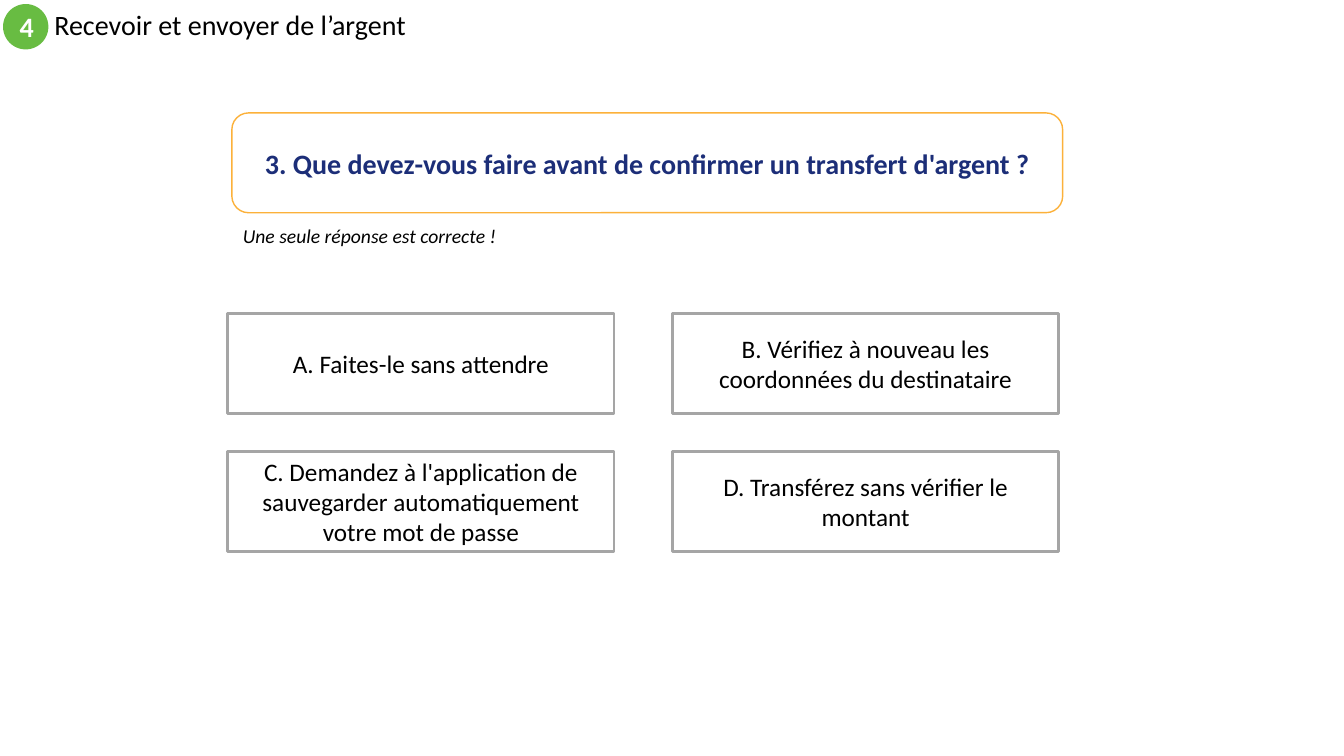
from dataclasses import dataclass

from pptx import Presentation, util as u
from pptx.dml.color import RGBColor
from pptx.enum import shapes, text


@dataclass(frozen=True)
class Theme:
    face: str = "Calibri"
    white: str = "FFFFFF"
    black: str = "000000"
    green: str = "68BC42"
    gold: str = "FCB13A"
    navy: str = "1C2E78"
    gray: str = "A5A5A5"
    head: int = 20
    body: int = 18
    note: int = 14


T = Theme()
WIDE, HIGH = 13.33, 7.5
KIND = shapes.MSO_SHAPE
SIDE = text.PP_ALIGN


def write(item, words, size, color, align=SIDE.CENTER, bold=False, slant=False):
    frame = item.text_frame
    frame.word_wrap = True
    frame.vertical_anchor = text.MSO_ANCHOR.MIDDLE
    para = frame.paragraphs[0]
    para.text = words
    para.alignment = align
    font = para.font
    font.name, font.size = T.face, u.Pt(size)
    font.bold, font.italic = bold, slant
    font.color.rgb = RGBColor.from_string(color)
    return frame


def panel(slide, kind, box, fill, line=None, width=1):
    item = slide.shapes.add_shape(kind, *map(u.Inches, box))
    item.shadow.inherit = False
    item.fill.solid()
    item.fill.fore_color.rgb = RGBColor.from_string(fill)
    if line:
        item.line.color.rgb = RGBColor.from_string(line)
        item.line.width = u.Pt(width)
    else:
        item.line.fill.background()
    return item


def label(slide, box, words, size, **style):
    item = slide.shapes.add_textbox(*map(u.Inches, box))
    return write(item, words, size, T.black, SIDE.LEFT, **style)


def header(slide, box, number, title):
    left, top, width, high = box
    badge = panel(slide, KIND.OVAL, (left, top, high, high), T.green)
    write(badge, number, T.head, T.white, bold=True)
    start = left + high - 0.04
    frame = label(slide, (start, top, width - start, high), title, T.head)
    frame.paragraphs[0].line_spacing = 0.9


def question(slide, box, words, hint):
    left, top, width, high = box
    card = panel(slide, KIND.ROUNDED_RECTANGLE, box, T.white, T.gold)
    write(card, words, T.head, T.navy, bold=True)
    spot = left + 0.01, top + high + 0.06, 3.18, 0.34
    frame = label(slide, spot, hint, T.note, slant=True)
    frame.vertical_anchor = text.MSO_ANCHOR.TOP
    frame.auto_size = text.MSO_AUTO_SIZE.SHAPE_TO_FIT_TEXT


def answers(slide, box, choices, cols=2, gap=(0.58, 0.38)):
    left, top, width, high = box
    rows = -(-len(choices) // cols)
    wide = (width - gap[0] * (cols - 1)) / cols
    tall = (high - gap[1] * (rows - 1)) / rows
    for i, words in enumerate(choices):
        row, col = divmod(i, cols)
        cell = (left + col * (wide + gap[0]), top + row * (tall + gap[1]),
                wide, tall)
        card = panel(slide, KIND.RECTANGLE, cell, T.white, T.gray, 2)
        write(card, words, T.body, T.black)


def main():
    deck = Presentation()
    deck.slide_width, deck.slide_height = u.Inches(WIDE), u.Inches(HIGH)
    slide = deck.slides.add_slide(deck.slide_layouts[6])
    header(slide, (0.03, 0.04, 8.44, 0.45), "4",
           "Recevoir et envoyer de l’argent")
    question(slide, (2.3, 1.12, 8.24, 0.99),
             "3. Que devez-vous faire avant de confirmer un transfert d'argent ?",
             "Une seule réponse est correcte !")
    answers(slide, (2.26, 3.11, 8.24, 2.36), [
        "A. Faites-le sans attendre",
        "B. Vérifiez à nouveau les coordonnées du destinataire",
        "C. Demandez à l'application de sauvegarder automatiquement votre mot de passe",
        "D. Transférez sans vérifier le montant",
    ])
    deck.save("out.pptx")


if __name__ == "__main__":
    main()
